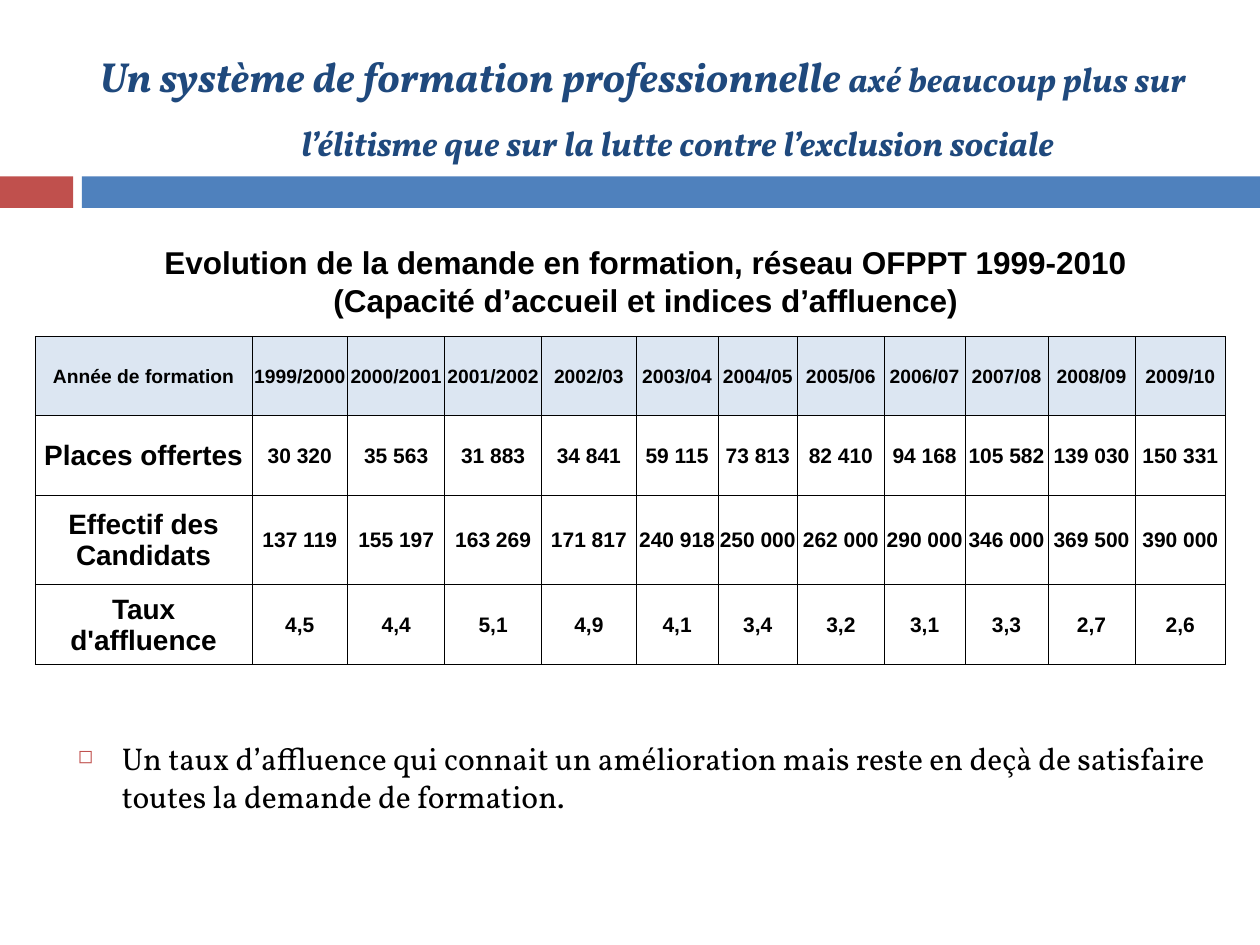
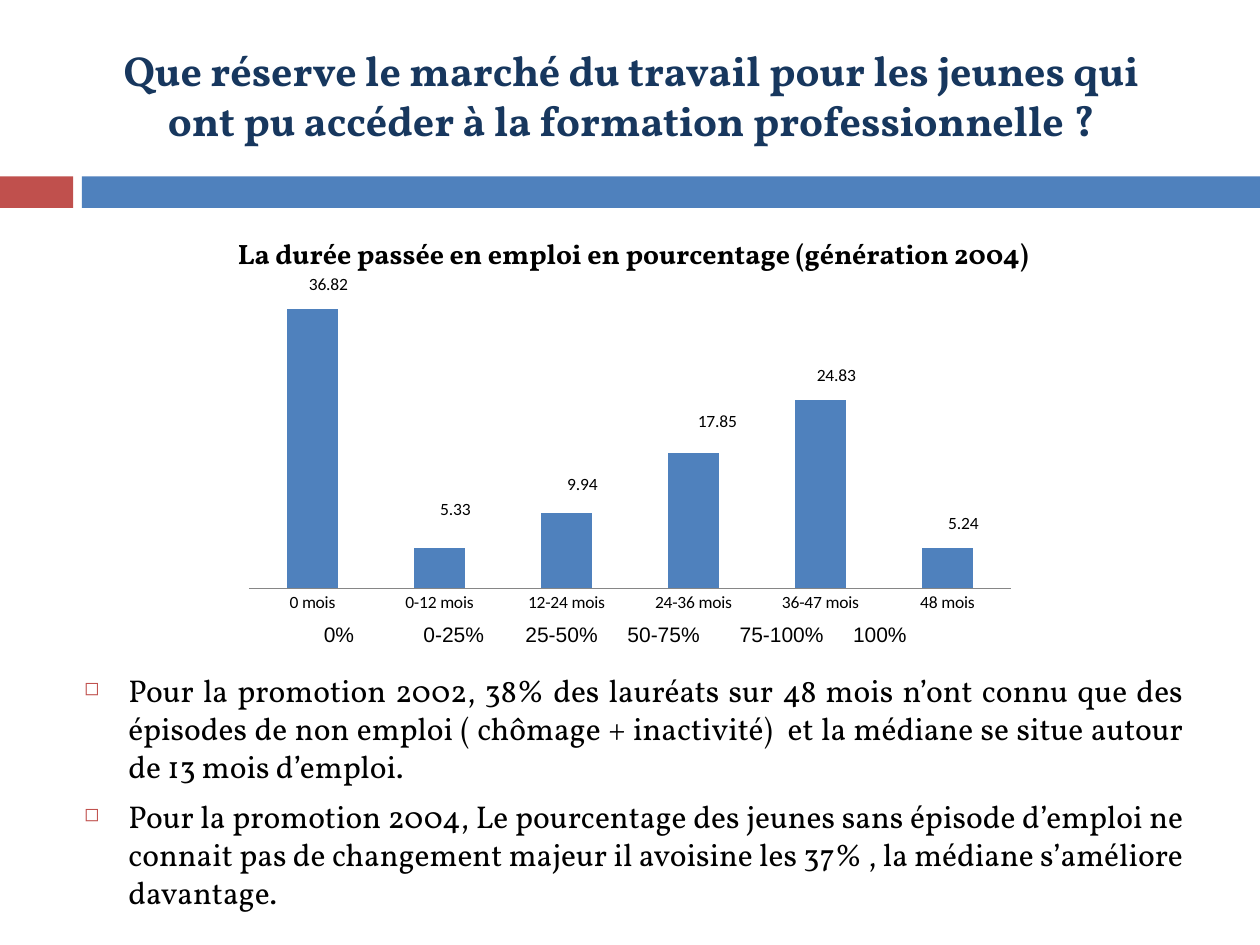
from dataclasses import dataclass
from typing import Optional

import lxml.etree
import pptx
import pptx.chart.data
import pptx.dml.color
import pptx.enum.chart
import pptx.enum.shapes
import pptx.enum.text
import pptx.oxml
import pptx.oxml.ns
import pptx.util

Inches = pptx.util.Inches
Pt = pptx.util.Pt
ALIGN = pptx.enum.text.PP_ALIGN
ANCHOR = pptx.enum.text.MSO_ANCHOR
qn = pptx.oxml.ns.qn

# Shared look
RED, BLUE, BLACK = "C0504D", "4F81BD", "000000"
TITLE_BLUE, DEEP_BLUE = "1F497D", "17375E"
HEADER_FILL, AXIS_GREY = "DCE6F2", "868686"
SERIF, SANS, CHART_FONT = "Vollkorn", "Arial", "Calibri"

# Chart extension that holds the leader line switch
LEADER_URI = "{CE6537A1-D6FC-4f65-9D91-7224C49458BB}"
LEADER_TAG = "{http://schemas.microsoft.com/office/drawing/2012/chart}showLeaderLines"


@dataclass(frozen=True)
class Area:
    left: float
    top: float
    width: float
    height: float

    def emu(self) -> tuple:
        return tuple(Inches(v) for v in (self.left, self.top, self.width, self.height))


@dataclass(frozen=True)
class Style:
    size: float
    font: str = SERIF
    color: str = BLACK
    bold: bool = False
    italic: bool = False


@dataclass(frozen=True)
class Span:
    text: str
    style: Style


@dataclass(frozen=True)
class Band:
    area: Area
    color: str


@dataclass(frozen=True)
class Bar:
    category: str
    value: float
    label_shift: tuple  # share of chart width and height


BANDS = (Band(Area(0, 1.4, 0.58, 0.25), RED), Band(Area(0.65, 1.4, 9.35, 0.25), BLUE))
BODY = Style(18)

DEMAND_COLUMNS = (1.72, 0.76, 0.77, 0.77, 0.75, 0.65, 0.63, 0.69, 0.64, 0.66, 0.69, 0.72)
DEMAND_ROWS = (0.63, 0.63, 0.71, 0.63)
DEMAND = (
    ("Année de formation", "1999/2000", "2000/2001", "2001/2002", "2002/03", "2003/04",
     "2004/05", "2005/06", "2006/07", "2007/08", "2008/09", "2009/10"),
    ("Places offertes", "30 320", "35 563", "31 883", "34 841", "59 115",
     "73 813", "82 410", "94 168", "105 582", "139 030", "150 331"),
    ("Effectif des Candidats", "137 119", "155 197", "163 269", "171 817", "240 918",
     "250 000", "262 000", "290 000", "346 000", "369 500", "390 000"),
    ("Taux d'affluence", "4,5", "4,4", "5,1", "4,9", "4,1",
     "3,4", "3,2", "3,1", "3,3", "2,7", "2,6"),
)

EMPLOYMENT = (
    Bar("0 mois", 36.82, (0.02, -0.03)),
    Bar("0-12 mois", 5.33, (0.02, -0.07)),
    Bar("12-24 mois", 9.94, (0.02, -0.04)),
    Bar("24-36 mois", 17.85, (0.03, -0.05)),
    Bar("36-47 mois", 24.83, (0.02, -0.03)),
    Bar("48 mois", 5.24, (0.02, -0.03)),
)
SHARES = ("0%", "0-25%", "25-50%", "50-75%", "75-100%", "100%")
SHARE_TABS = (0.79, 1.6, 2.41, 3.3, 4.2)


def rgb(color: str) -> pptx.dml.color.RGBColor:
    return pptx.dml.color.RGBColor.from_string(color)


def set_font(font, style: Style) -> None:
    font.name = style.font
    font.size = Pt(style.size)
    font.bold = style.bold
    font.italic = style.italic
    font.color.rgb = rgb(style.color)


def add_child(parent, tag: str, **attributes: str):
    child = lxml.etree.SubElement(parent, qn(tag))
    for name, value in attributes.items():
        child.set(name, value)
    return child


def set_indent(para, indent: float) -> None:
    properties = para._p.get_or_add_pPr()
    properties.set("marL", str(Inches(indent)))
    properties.set("indent", str(-Inches(indent)))


def add_bullet(para) -> None:
    set_indent(para, 0.35)
    properties = para._p.get_or_add_pPr()
    add_child(add_child(properties, "a:buClr"), "a:srgbClr", val=RED)
    add_child(properties, "a:buSzPct", val="60000")
    add_child(properties, "a:buChar", char="◻")


def add_text(page, area: Area, paragraphs: list, align=ALIGN.CENTER, anchor=ANCHOR.TOP):
    """Each paragraph is a list of spans."""
    box = page.shapes.add_textbox(*area.emu())
    frame = box.text_frame
    frame.word_wrap = True
    frame.vertical_anchor = anchor
    for number, spans in enumerate(paragraphs):
        para = frame.add_paragraph() if number else frame.paragraphs[0]
        para.alignment = align
        for span in spans:
            run = para.add_run()
            run.text = span.text
            set_font(run.font, span.style)
    return box


def add_bullets(page, area: Area, texts: list) -> None:
    box = add_text(page, area, [[Span(text, BODY)] for text in texts], ALIGN.JUSTIFY)
    for number, para in enumerate(box.text_frame.paragraphs):
        add_bullet(para)
        para.space_before = Pt(7 if number else 0)


def add_page(deck, title_area: Area, title: list, indent: Optional[float] = None,
             line_spacing: float = 1.0):
    page = deck.slides.add_slide(deck.slide_layouts[6])
    for band in BANDS:
        shape = page.shapes.add_shape(pptx.enum.shapes.MSO_SHAPE.RECTANGLE, *band.area.emu())
        shape.shadow.inherit = False
        shape.fill.solid()
        shape.fill.fore_color.rgb = rgb(band.color)
        shape.line.fill.background()
    box = add_text(page, title_area, [title], anchor=ANCHOR.MIDDLE)
    para = box.text_frame.paragraphs[0]
    para.line_spacing = line_spacing
    if indent:
        set_indent(para, indent)
    return page


def add_borders(cell) -> None:
    properties = cell._tc.get_or_add_tcPr()
    for position, side in enumerate(("a:lnL", "a:lnR", "a:lnT", "a:lnB")):
        line = add_child(properties, side, w=str(Pt(0.5)))
        add_child(add_child(line, "a:solidFill"), "a:srgbClr", val=BLACK)
        properties.insert(position, line)


def add_demand_table(page) -> None:
    area = Area(0.28, 2.67, sum(DEMAND_COLUMNS), sum(DEMAND_ROWS))
    table = page.shapes.add_table(len(DEMAND), len(DEMAND_COLUMNS), *area.emu()).table
    table.first_row = table.horz_banding = False
    for column, width in zip(table.columns, DEMAND_COLUMNS):
        column.width = Inches(width)
    for row, height in zip(table.rows, DEMAND_ROWS):
        row.height = Inches(height)
    for row_number, texts in enumerate(DEMAND):
        for column_number, text in enumerate(texts):
            cell = table.cell(row_number, column_number)
            cell.text_frame.text = text
            cell.vertical_anchor = ANCHOR.MIDDLE
            cell.margin_left = cell.margin_right = cell.margin_bottom = 0
            cell.margin_top = Inches(0.01)
            if row_number == 0:
                size = 11
                cell.fill.solid()
                cell.fill.fore_color.rgb = rgb(HEADER_FILL)
            else:
                size = 12 if column_number else 16
                cell.fill.background()
            para = cell.text_frame.paragraphs[0]
            para.alignment = ALIGN.CENTER
            set_font(para.runs[0].font, Style(size, SANS, bold=True))
            add_borders(cell)


def add_manual_layout(layout, **values) -> None:
    manual = add_child(layout, "c:manualLayout")
    for name, value in values.items():
        add_child(manual, f"c:{name}", val=str(value))


def hide_leader_lines(labels_element) -> None:
    for switch in labels_element.findall(qn("c:showLeaderLines")):
        switch.set("val", "0")
    extension = add_child(add_child(labels_element, "c:extLst"), "c:ext", uri=LEADER_URI)
    lxml.etree.SubElement(extension, LEADER_TAG).set("val", "0")


def add_employment_chart(page) -> None:
    data = pptx.chart.data.CategoryChartData(number_format="#,##0.00")
    data.categories = [bar.category for bar in EMPLOYMENT]
    data.add_series("Series 1", [bar.value for bar in EMPLOYMENT])
    chart = page.shapes.add_chart(pptx.enum.chart.XL_CHART_TYPE.COLUMN_CLUSTERED,
                                  *Area(1.85, 2.18, 6.3, 2.76).emu(), data).chart
    chart.has_legend = chart.has_title = False
    set_font(chart.font, Style(10, CHART_FONT))

    # Axes
    chart.value_axis.visible = False
    chart.value_axis.has_major_gridlines = False
    chart.value_axis.minimum_scale = 0
    chart.value_axis.maximum_scale = 39.5
    chart.category_axis.major_tick_mark = pptx.enum.chart.XL_TICK_MARK.NONE
    chart.category_axis.format.line.color.rgb = rgb(AXIS_GREY)
    chart.category_axis.format.line.width = Pt(0.75)

    # Columns and their shifted labels
    plot = chart.plots[0]
    plot.gap_width = 150
    plot.vary_by_categories = False
    series = plot.series[0]
    series.format.fill.solid()
    series.format.fill.fore_color.rgb = rgb(BLUE)
    labels = series.data_labels
    labels.show_value = True
    labels.number_format = "#,##0.00"
    labels.number_format_is_linked = False
    outside = pptx.enum.chart.XL_LABEL_POSITION.OUTSIDE_END
    labels.position = outside
    for number, bar in enumerate(EMPLOYMENT):
        series.points[number].data_label.position = outside
    labels_element = series._element.find(qn("c:dLbls"))
    for bar, element in zip(EMPLOYMENT, labels_element.findall(qn("c:dLbl"))):
        layout = add_child(element, "c:layout")
        element.insert(1, layout)
        add_manual_layout(layout, x=bar.label_shift[0], y=bar.label_shift[1])
    hide_leader_lines(labels_element)

    # Plot area inside the chart
    plot_area = chart._chartSpace.find(".//" + qn("c:plotArea"))
    layout = plot_area.find(qn("c:layout"))
    if layout is None:
        layout = add_child(plot_area, "c:layout")
        plot_area.insert(0, layout)
    add_manual_layout(layout, layoutTarget="inner", xMode="edge", yMode="edge",
                      x=0.02, y=0.02, w=0.96, h=0.88)


def add_share_row(page) -> None:
    box = add_text(page, Area(2.34, 4.88, 4.98, 0.3),
                   [[Span("\t".join(SHARES), Style(12, SANS))]], ALIGN.LEFT)
    box.text_frame.margin_left = Inches(0.23)
    tabs = add_child(box.text_frame.paragraphs[0]._p.get_or_add_pPr(), "a:tabLst")
    for position in SHARE_TABS:
        add_child(tabs, "a:tab", pos=str(Inches(position)), algn="l")


def build_demand_page(deck) -> None:
    page = add_page(deck, Area(0.67, 0.21, 8.86, 1.08), [
        Span("Un système de formation professionnelle ",
             Style(24, color=TITLE_BLUE, bold=True, italic=True)),
        Span("axé beaucoup plus sur l’élitisme que sur la lutte contre l’exclusion sociale",
             Style(20, color=TITLE_BLUE, bold=True, italic=True)),
    ], indent=0.56, line_spacing=1.5)
    heading = Style(18, SANS, bold=True)
    add_text(page, Area(0.62, 1.88, 9.01, 0.71), [
        [Span("Evolution de la demande en formation, réseau OFPPT 1999-2010", heading)],
        [Span("(Capacité d’accueil et indices d’affluence)", heading)],
    ])
    add_demand_table(page)
    add_bullets(page, Area(0.52, 5.82, 9.14, 0.84), [
        "Un taux d’affluence qui connait un amélioration mais reste en deçà de satisfaire "
        "toutes la demande de formation.",
    ])


def build_employment_page(deck) -> None:
    page = add_page(deck, Area(0.59, 0.21, 8.84, 1.08), [
        Span("Que réserve le marché du travail pour les jeunes qui ont pu accéder "
             "à la formation professionnelle ?", Style(24, color=DEEP_BLUE, bold=True)),
    ])
    add_employment_chart(page)
    add_share_row(page)
    add_text(page, Area(1.41, 1.83, 7.24, 0.37), [
        [Span("La durée passée en emploi en pourcentage (génération 2004)",
              Style(16, bold=True))],
    ])
    add_bullets(page, Area(0.57, 5.28, 8.92, 2.22), [
        "Pour la promotion 2002, 38% des lauréats sur 48 mois n’ont connu que des épisodes "
        "de non emploi ( chômage + inactivité)  et la médiane se situe autour de 13 mois "
        "d’emploi.",
        "Pour la promotion 2004, Le pourcentage des jeunes sans épisode d’emploi ne connait "
        "pas de changement majeur il avoisine les 37% , la médiane s’améliore davantage.",
    ])


def main() -> None:
    deck = pptx.Presentation()
    deck.slide_width, deck.slide_height = Inches(10), Inches(7.5)
    build_demand_page(deck)
    build_employment_page(deck)
    deck.save("out.pptx")


if __name__ == "__main__":
    main()
